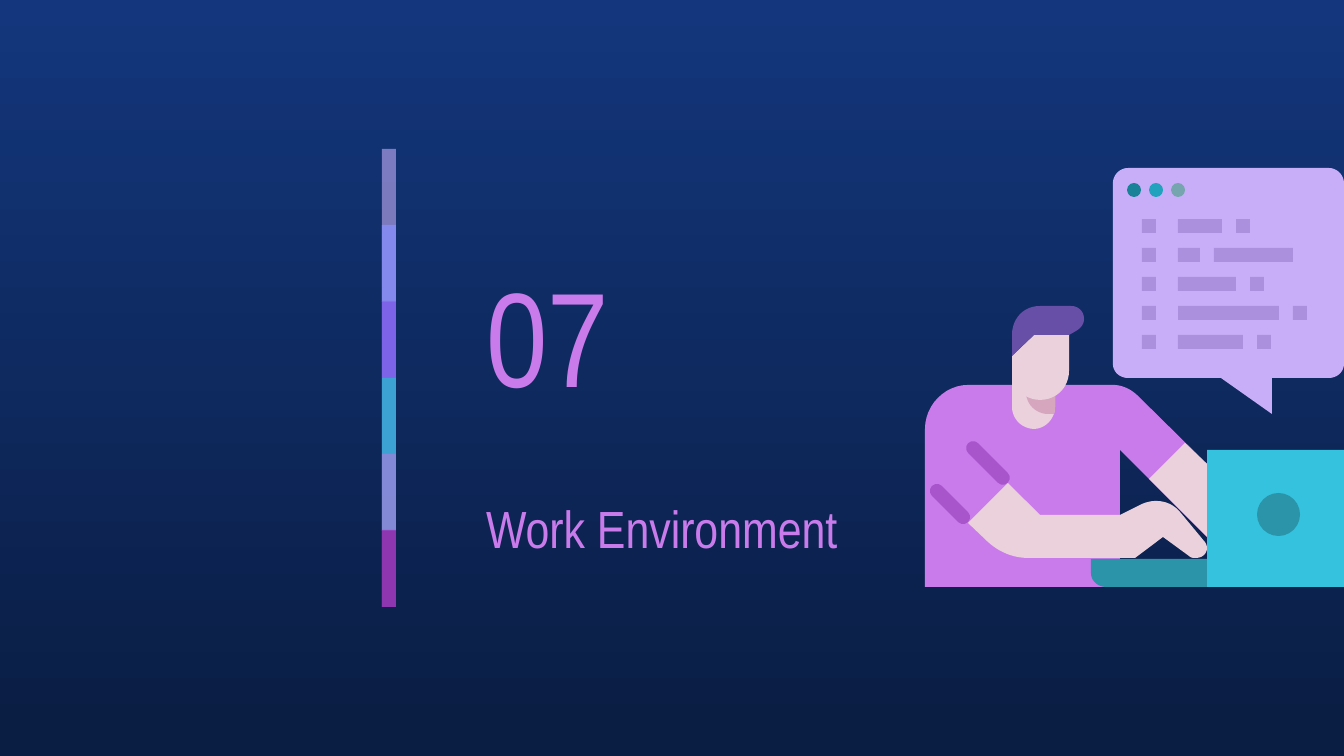
import pptx
import pptx.util
import pptx.dml.color
import pptx.enum.shapes
import pptx.enum.text
import pptx.oxml
import pptx.oxml.ns

COLORS = {
    "sky_top": "13367C", "sky_bottom": "0A1D42",
    "pink": "CA7BEB", "stripe": "A855CB", "lilac": "C8AEF8", "code": "AB90DE",
    "periwinkle": "878FFF", "violet": "9154F8", "purple": "972CB4",
    "cyan": "35C2DF", "teal": "2B94A9", "skin": "EAD1DC", "shade": "D5A6BD",
    "hair": "674EA7", "dot_dark": "198298", "dot_bright": "22A2BC", "dot_gray": "76A5AF",
}
SHAPES = pptx.enum.shapes.MSO_SHAPE
CURVE_STEPS = 12


def px(length):
    return round(length * 914400 / 134.4)


def rgb(name):
    return pptx.dml.color.RGBColor.from_string(COLORS[name])


def trace(path):
    points = [path[0]]
    for step in path[1:]:
        if len(step) == 2:
            points.append(step)
            continue
        x0, y0 = points[-1]
        x1, y1, x2, y2, x3, y3 = step
        for i in range(1, CURVE_STEPS + 1):
            t = i / CURVE_STEPS
            a, b, c, d = (1 - t) ** 3, 3 * t * (1 - t) ** 2, 3 * t * t * (1 - t), t ** 3
            points.append((a * x0 + b * x1 + c * x2 + d * x3,
                           a * y0 + b * y1 + c * y2 + d * y3))
    return [(px(x), px(y)) for x, y in points]


class Painter:
    font = "Arial Narrow"

    def __init__(self, slide):
        self.slide = slide

    def background(self, top, bottom):
        fill = self.slide.background.fill
        fill.gradient()
        fill.gradient_angle = 270
        for stop, color, position in zip(fill.gradient_stops, (top, bottom), (0, 1)):
            stop.color.rgb = rgb(color)
            stop.position = position

    def paint(self, shape, color, alpha=100):
        shape.shadow.inherit = False
        shape.fill.solid()
        shape.fill.fore_color.rgb = rgb(color)
        shape.line.fill.background()
        if alpha < 100:
            tint = shape.fill._xPr.find(".//" + pptx.oxml.ns.qn("a:srgbClr"))
            tint.append(pptx.oxml.parse_xml(
                f'<a:alpha {pptx.oxml.ns.nsdecls("a")} val="{alpha * 1000}"/>'))

    def preset(self, kind, x, y, w, h, color, alpha=100):
        shape = self.slide.shapes.add_shape(kind, px(x), px(y), px(w), px(h))
        self.paint(shape, color, alpha)
        return shape

    def rect(self, x, y, w, h, color, alpha=100):
        self.preset(SHAPES.RECTANGLE, x, y, w, h, color, alpha)

    def circle(self, x, y, size, color):
        self.preset(SHAPES.OVAL, x, y, size, size, color)

    def diagonal_stripe(self, center_x, center_y, length, width, color):
        stripe = self.preset(SHAPES.ROUNDED_RECTANGLE, center_x - length / 2,
                             center_y - width / 2, length, width, color)
        stripe.adjustments[0] = 0.5
        stripe.rotation = 45

    def outline(self, path, color):
        start, *rest = trace(path)
        builder = self.slide.shapes.build_freeform(*start, scale=1.0)
        builder.add_line_segments(rest, close=True)
        self.paint(builder.convert_to_shape(), color)

    def text(self, box, words, size, color):
        frame = box.text_frame
        frame.word_wrap = True
        frame.auto_size = pptx.enum.text.MSO_AUTO_SIZE.NONE
        frame.vertical_anchor = pptx.enum.text.MSO_ANCHOR.MIDDLE
        frame.margin_left = frame.margin_right = px(13)
        frame.margin_top = frame.margin_bottom = px(13)
        paragraph = frame.paragraphs[0]
        paragraph.text = words
        paragraph.alignment = pptx.enum.text.PP_ALIGN.LEFT
        paragraph.font.name = self.font
        paragraph.font.size = pptx.util.Pt(size)
        paragraph.font.color.rgb = rgb(color)

    def title(self, x, y, w, h, words, size, color):
        title = self.slide.shapes.title
        title.left, title.top, title.width, title.height = px(x), px(y), px(w), px(h)
        self.text(title, words, size, color)

    def label(self, x, y, w, h, words, size, color):
        box = self.slide.shapes.add_textbox(px(x), px(y), px(w), px(h))
        self.text(box, words, size, color)


TORSO = [(968, 385), (945, 385, 925, 405, 925, 429), (925, 587), (1120, 587), (1120, 450),
         (1207, 537), (1207, 464), (1138, 396), (1131, 389, 1122, 385, 1113, 385)]
LAPTOP_BASE = [(1091, 559), (1091, 573), (1091, 581, 1098, 587, 1106, 587),
               (1207, 587), (1207, 559)]
NECK = [(1012, 364), (1012, 407), (1012, 419, 1022, 429, 1034, 429),
        (1045, 429, 1055, 419, 1055, 407), (1055, 364)]
NECK_SHADE = [(1026, 364), (1026, 392), (1026, 404, 1036, 414, 1048, 414), (1054, 414),
              (1055, 412, 1055, 409, 1055, 407), (1055, 364)]
NEAR_ARM = [(1008, 483), (968, 523), (988, 542), (999, 552, 1013, 558, 1028, 558),
            (1135, 558), (1163, 537), (1189, 556), (1191, 558, 1193, 558, 1196, 558),
            (1202, 558, 1207, 554, 1207, 548), (1207, 546, 1206, 543, 1204, 541),
            (1180, 512), (1174, 505, 1166, 501, 1156, 501),
            (1151, 501, 1147, 502, 1142, 504), (1120, 515), (1040, 515)]
FAR_ARM = [(1185, 443), (1149, 479), (1207, 537), (1207, 464)]
SPEECH_WINDOW = [(1128, 168), (1120, 168, 1113, 175, 1113, 183), (1113, 364),
                 (1113, 372, 1120, 378, 1128, 378), (1221, 378), (1272, 414), (1272, 378),
                 (1329, 378), (1337, 378, 1344, 372, 1344, 364), (1344, 183),
                 (1344, 175, 1337, 168, 1329, 168)]
FACE = [(1034, 335), (1012, 356), (1012, 371), (1012, 387, 1024, 400, 1040, 400),
        (1057, 400, 1069, 387, 1069, 371), (1069, 335)]
HAIR = [(1040, 306), (1024, 306, 1012, 318, 1012, 335), (1012, 356), (1034, 335),
        (1069, 335), (1076, 331), (1081, 328, 1084, 324, 1084, 319),
        (1084, 311, 1078, 306, 1071, 306)]
BARS = [("lilac", 59), ("periwinkle", 74), ("violet", 53), ("cyan", 76), ("pink", 56),
        ("purple", 74)]
CODE_LINES = [(44, 14), (22, 79), (58, 14), (101, 14), (65, 14)]


def main():
    deck = pptx.Presentation()
    deck.slide_width, deck.slide_height = px(1344), px(756)
    painter = Painter(deck.slides.add_slide(deck.slide_layouts[5]))
    painter.background("sky_top", "sky_bottom")

    bar_bottom = 607
    for i, (color, alpha) in enumerate(BARS):
        top = 149 + 229 * i // 3
        painter.rect(382, top, 14, min(153, bar_bottom - top), color, alpha)

    painter.label(473, 243, 235, 181, "07", 72, "pink")
    painter.title(473, 483, 386, 90, "Work Environment", 28, "pink")

    painter.outline(TORSO, "pink")
    painter.diagonal_stripe(950, 504, 51, 14, "stripe")
    painter.diagonal_stripe(988, 463, 56, 14, "stripe")
    painter.rect(1207, 450, 137, 137, "cyan")
    for path, color in [(LAPTOP_BASE, "teal"), (NECK, "skin"), (NECK_SHADE, "shade"),
                        (NEAR_ARM, "skin"), (FAR_ARM, "skin"), (SPEECH_WINDOW, "lilac"),
                        (FACE, "skin"), (HAIR, "hair")]:
        painter.outline(path, color)
    painter.circle(1257, 493, 43, "teal")

    for row, (first, second) in enumerate(CODE_LINES):
        y = 219 + 29 * row
        for x, width in [(1142, 14), (1178, first), (1178 + first + 14, second)]:
            painter.rect(x, y, width, 14, "code")
    for i, color in enumerate(("dot_dark", "dot_bright", "dot_gray")):
        painter.circle(1127 + 22 * i, 183, 14, color)

    deck.save("out.pptx")


if __name__ == "__main__":
    main()
